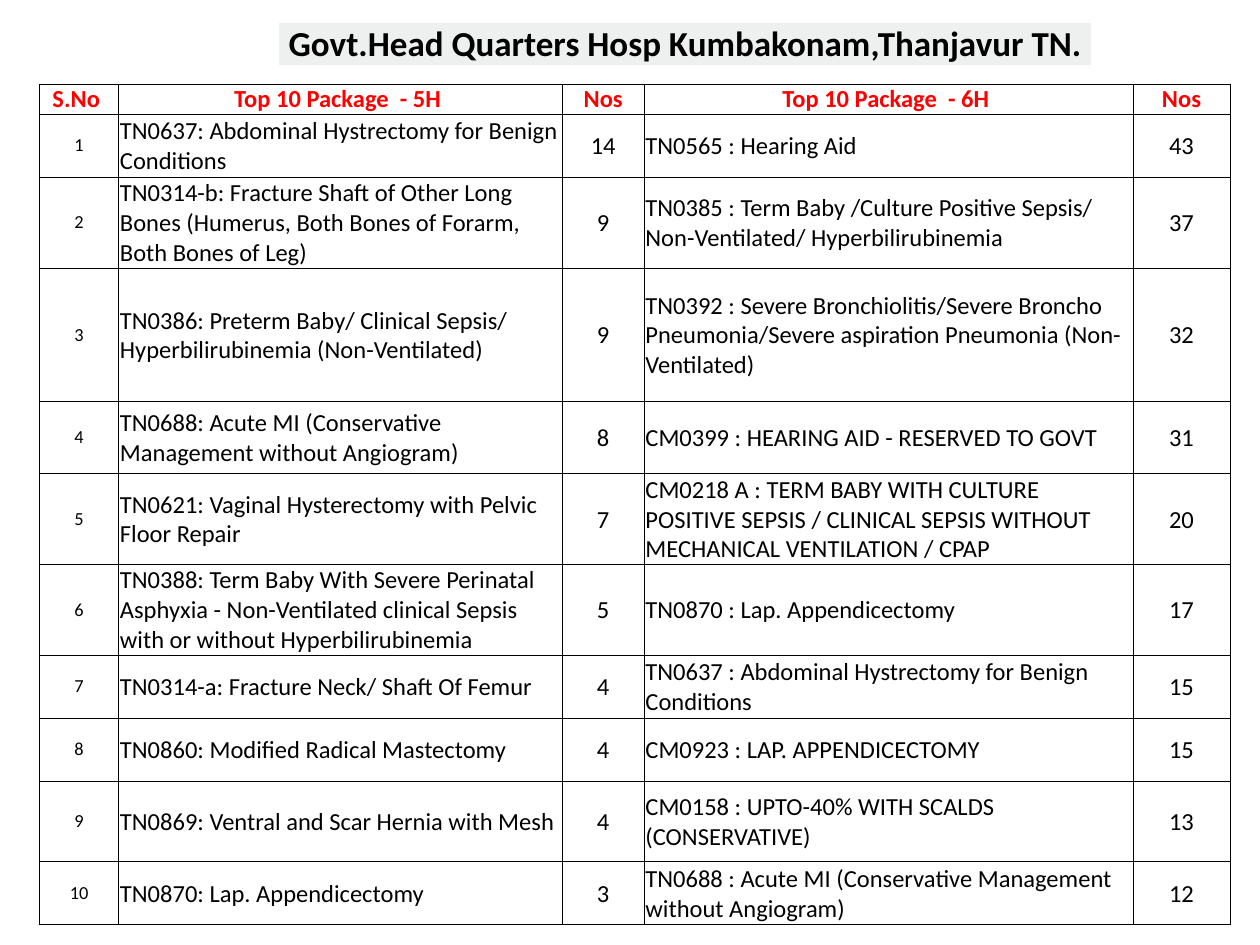
from lxml.etree import SubElement
from pptx import Presentation
from pptx.dml.color import RGBColor
from pptx.enum.text import MSO_ANCHOR, PP_ALIGN
from pptx.oxml.ns import qn
from pptx.util import Pt

BLACK = RGBColor(0x00, 0x00, 0x00)
WHITE = RGBColor(0xFF, 0xFF, 0xFF)
RED = RGBColor(0xFF, 0x00, 0x00)
PALE_GREY = RGBColor(0xEE, 0xF0, 0xEF)

FONT = "Calibri"
NO_INSET = (0, 0, 0, 0)
THIN_INSET = (0.75, 0.75, 0.75, 0)  # left, top, right, bottom

TITLE = "Govt.Head Quarters Hosp Kumbakonam,Thanjavur TN."
HEADERS = ["S.No ", "Top 10 Package  - 5H ", "Nos", "Top 10 Package  - 6H ", "Nos"]
COLUMN_WIDTHS = [45.3, 253.5, 46.8, 279.4, 55.4]
HEADER_HEIGHT = 17

# Row height, 5H package, 5H count, 6H package, 6H count
PACKAGES = [
    (36, "TN0637: Abdominal Hystrectomy for Benign Conditions", 14,
     "TN0565 : Hearing Aid", 43),
    (50, "TN0314-b: Fracture Shaft of Other Long Bones (Humerus, Both Bones of Forarm, "
     "Both Bones of Leg)", 9,
     "TN0385 : Term Baby /Culture Positive Sepsis/ Non-Ventilated/ Hyperbilirubinemia", 37),
    (76.5, "TN0386: Preterm Baby/ Clinical Sepsis/ Hyperbilirubinemia (Non-Ventilated)", 9,
     "TN0392 : Severe Bronchiolitis/Severe Broncho Pneumonia/Severe aspiration Pneumonia "
     "(Non-Ventilated)", 32),
    (41, "TN0688: Acute MI (Conservative Management without Angiogram)", 8,
     "CM0399 : HEARING AID - RESERVED TO GOVT", 31),
    (50, "TN0621: Vaginal Hysterectomy with Pelvic Floor Repair", 7,
     "CM0218 A : TERM BABY WITH CULTURE POSITIVE SEPSIS / CLINICAL SEPSIS WITHOUT "
     "MECHANICAL VENTILATION / CPAP", 20),
    (50, "TN0388: Term Baby With Severe Perinatal Asphyxia - Non-Ventilated clinical Sepsis "
     "with or without Hyperbilirubinemia", 5,
     "TN0870 : Lap. Appendicectomy", 17),
    (36, "TN0314-a: Fracture Neck/ Shaft Of Femur", 4,
     "TN0637 : Abdominal Hystrectomy for Benign Conditions", 15),
    (36, "TN0860: Modified Radical Mastectomy", 4,
     "CM0923 : LAP. APPENDICECTOMY", 15),
    (46, "TN0869: Ventral and Scar Hernia with Mesh", 4,
     "CM0158 : UPTO-40% WITH SCALDS (CONSERVATIVE)", 13),
    (36, "TN0870: Lap. Appendicectomy", 3,
     "TN0688 : Acute MI (Conservative Management without Angiogram)", 12),
]


def add_grid(slide, left, top, widths, heights):
    """Add an unbanded table with the given column widths and row heights."""
    frame = slide.shapes.add_table(len(heights), len(widths), Pt(left), Pt(top),
                                   Pt(sum(widths)), Pt(sum(heights)))
    table = frame.table
    table.first_row = False
    table.horz_banding = False
    for column, width in zip(table.columns, widths):
        column.width = Pt(width)
    for row, height in zip(table.rows, heights):
        row.height = Pt(height)
    return table


def set_borders(cell, color, width):
    """Draw a solid line on all four sides; call before the cell is filled."""
    properties = cell._tc.get_or_add_tcPr()
    for side in ("a:lnL", "a:lnR", "a:lnT", "a:lnB"):
        line = SubElement(properties, qn(side), w=str(Pt(width)))
        fill = SubElement(line, qn("a:solidFill"))
        SubElement(fill, qn("a:srgbClr"), val=str(color))


def fill_cell(cell, text, size=14, color=BLACK, bold=False, align=PP_ALIGN.CENTER,
              inset=THIN_INSET, anchor=MSO_ANCHOR.MIDDLE, fill=WHITE,
              border=(BLACK, 0.5)):
    set_borders(cell, *border)
    cell.fill.solid()
    cell.fill.fore_color.rgb = fill
    cell.vertical_anchor = anchor
    (cell.margin_left, cell.margin_top,
     cell.margin_right, cell.margin_bottom) = (Pt(value) for value in inset)
    paragraph = cell.text_frame.paragraphs[0]
    paragraph.alignment = align
    run = paragraph.add_run()
    run.text = text
    run.font.name = FONT
    run.font.size = Pt(size)
    run.font.bold = bold
    run.font.color.rgb = color


def add_title(slide):
    table = add_grid(slide, 159.1, 12.5, [465], [24])
    fill_cell(table.cell(0, 0), TITLE, size=20, bold=True, anchor=MSO_ANCHOR.BOTTOM,
              fill=PALE_GREY, border=(WHITE, 1))


def add_package_table(slide):
    heights = [HEADER_HEIGHT] + [package[0] for package in PACKAGES]
    table = add_grid(slide, 22.5, 48.2, COLUMN_WIDTHS, heights)

    # Header row
    for column, header in enumerate(HEADERS):
        fill_cell(table.cell(0, column), header, color=RED, bold=True, inset=NO_INSET)

    # Serial number, then name and count for each of the two lists
    for row, (_, *values) in enumerate(PACKAGES, start=1):
        fill_cell(table.cell(row, 0), str(row), size=10.5, inset=NO_INSET)
        for column, value in enumerate(values, start=1):
            align = PP_ALIGN.LEFT if isinstance(value, str) else PP_ALIGN.CENTER
            fill_cell(table.cell(row, column), str(value), align=align)


def main():
    presentation = Presentation()
    presentation.slide_width = Pt(720)
    presentation.slide_height = Pt(540)
    slide = presentation.slides.add_slide(presentation.slide_layouts[6])
    add_title(slide)
    add_package_table(slide)
    presentation.save("out.pptx")


if __name__ == "__main__":
    main()
